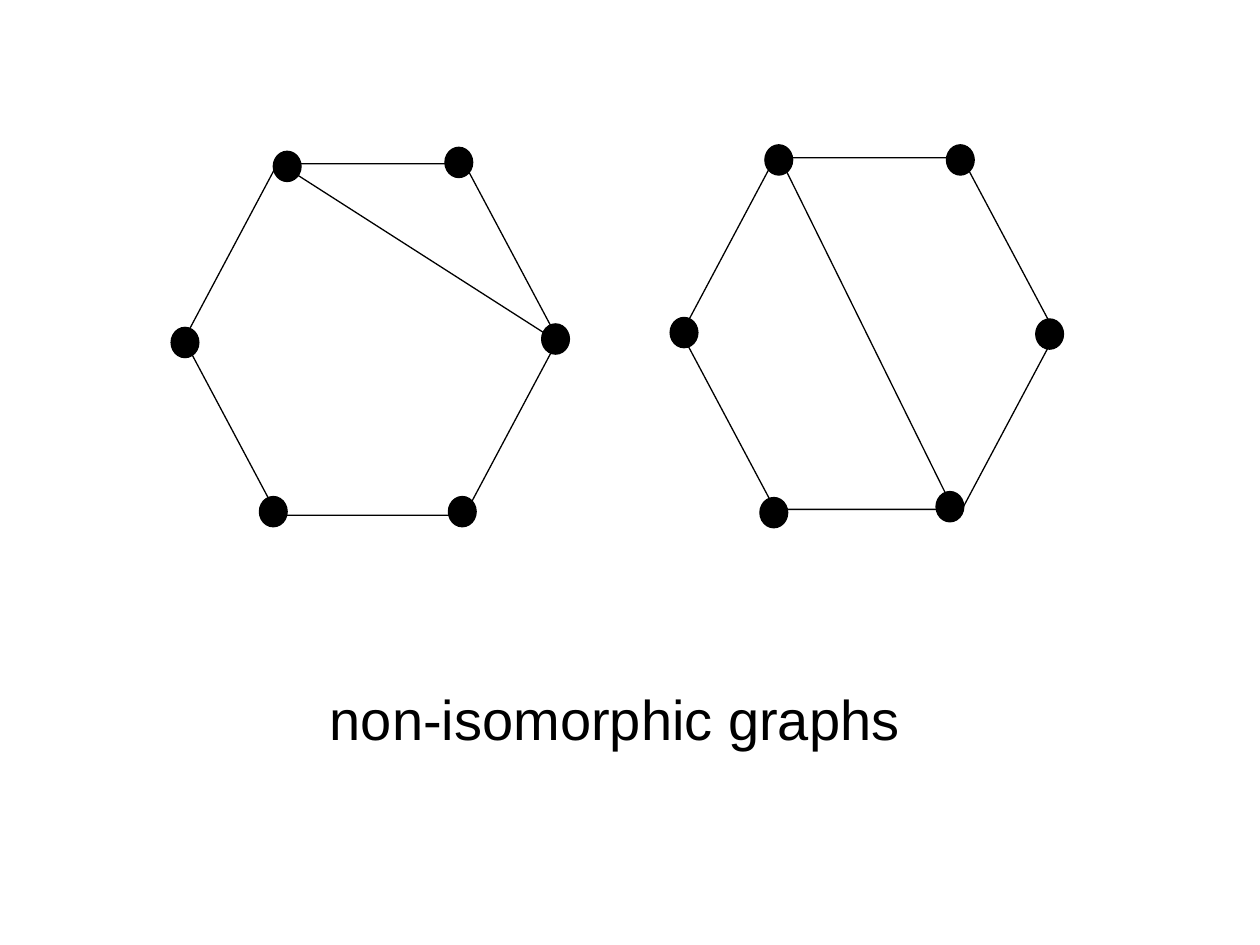
from dataclasses import dataclass

from lxml import etree
from pptx import Presentation
from pptx.dml.color import RGBColor
from pptx.enum.shapes import MSO_CONNECTOR, MSO_SHAPE
from pptx.enum.text import MSO_AUTO_SIZE
from pptx.oxml.ns import qn
from pptx.util import Cm, Pt

HEXAGON = MSO_SHAPE.HEXAGON
OVAL = MSO_SHAPE.OVAL
STRAIGHT = MSO_CONNECTOR.STRAIGHT
GROW = MSO_AUTO_SIZE.SHAPE_TO_FIT_TEXT

BLACK = "000000"
HEXAGON_SIZE = (7.54, 7.09)
VERTEX_SIZE = (0.56, 0.61)
CAPTION_FORMAT = {"name": "Arial", "size": Pt(32)}

Point = tuple[float, float]


@dataclass(frozen=True)
class Graph:
    corner: Point
    chord: tuple[Point, Point]
    vertices: tuple[Point, ...]


GRAPHS = (
    Graph(
        corner=(3.71, 3.3),
        chord=((5.64, 3.3), (11.28, 6.91)),
        vertices=((5.23, 10.01), (3.45, 6.6), (5.51, 3.05),
                  (8.97, 2.97), (9.04, 10.01), (10.92, 6.53)),
    ),
    Graph(
        corner=(13.74, 3.18),
        chord=((15.72, 3.18), (19.23, 10.29)),
        vertices=((13.51, 6.4), (15.32, 10.03), (18.87, 9.91),
                  (20.88, 6.43), (15.42, 2.92), (19.08, 2.92)),
    ),
)


def color(value: str) -> RGBColor:
    return RGBColor.from_string(value)


def lengths(*values: float) -> list[Cm]:
    return [Cm(value) for value in values]


def style_line(shape) -> None:
    shape.line.color.rgb = color(BLACK)
    shape.line.width = Pt(0.75)


def draw_cycle(slide, graph: Graph) -> None:
    shape = slide.shapes.add_shape(HEXAGON, *lengths(*graph.corner, *HEXAGON_SIZE))
    shape.adjustments[0] = 0.266
    shape.shadow.inherit = False
    shape.fill.background()
    style_line(shape)


def draw_chord(slide, graph: Graph) -> None:
    start, end = graph.chord
    connector = slide.shapes.add_connector(STRAIGHT, *lengths(*start, *end))
    style_line(connector)
    etree.SubElement(connector._element.spPr, qn("a:effectLst"))


def draw_vertices(slide, graph: Graph) -> None:
    for vertex in graph.vertices:
        shape = slide.shapes.add_shape(OVAL, *lengths(*vertex, *VERTEX_SIZE))
        shape.shadow.inherit = False
        shape.fill.solid()
        shape.fill.fore_color.rgb = color(BLACK)
        style_line(shape)


def draw_caption(slide, text: str) -> None:
    shape = slide.shapes.add_textbox(*lengths(6.4, 13.67, 13.11, 1.6))
    shape.text_frame.word_wrap = True
    shape.text_frame.auto_size = GROW
    run = shape.text_frame.paragraphs[0].add_run()
    run.text = text
    for name, value in CAPTION_FORMAT.items():
        setattr(run.font, name, value)
    run.font.color.rgb = color(BLACK)


def main() -> None:
    presentation = Presentation()
    presentation.slide_width, presentation.slide_height = lengths(25.4, 19.05)
    slide = presentation.slides.add_slide(presentation.slide_layouts[6])
    for draw in (draw_cycle, draw_chord, draw_vertices):
        for graph in GRAPHS:
            draw(slide, graph)
    draw_caption(slide, "non-isomorphic graphs")
    presentation.save("out.pptx")


if __name__ == "__main__":
    main()
